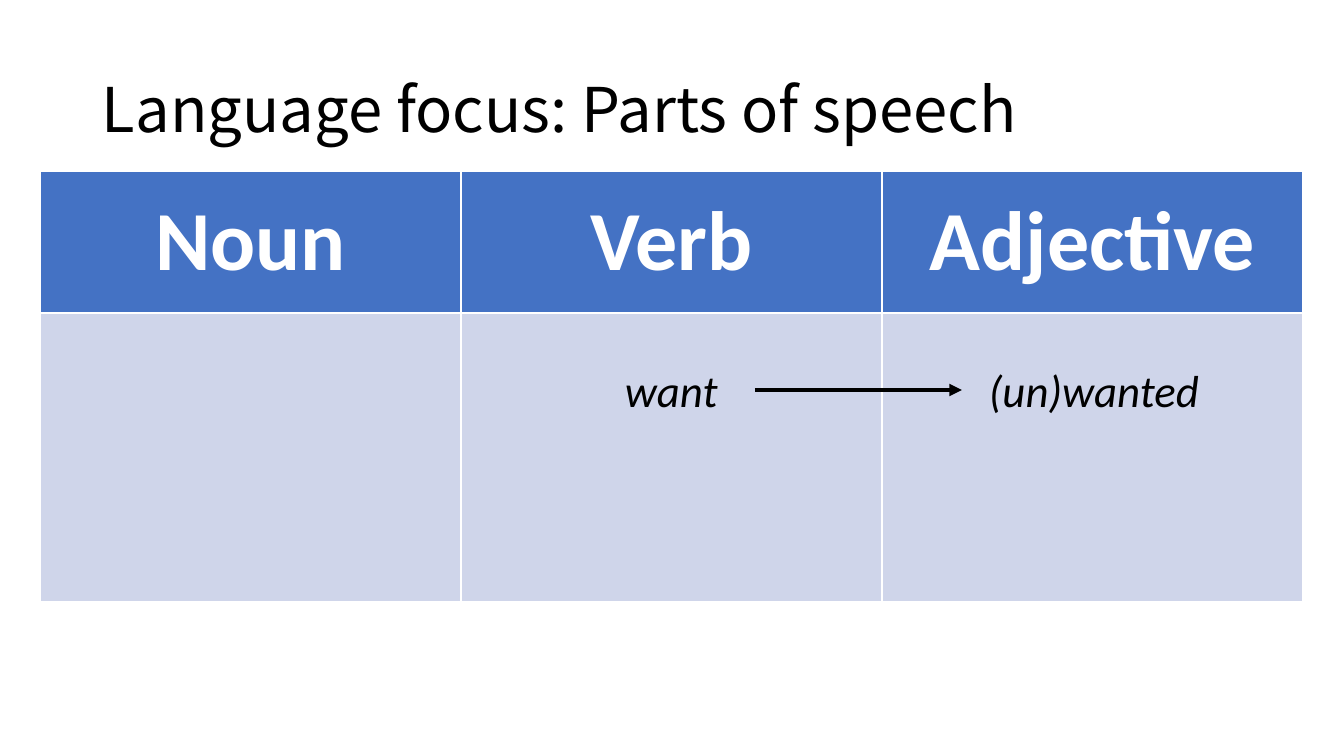
from lxml.etree import SubElement
from pptx import Presentation
from pptx.dml.color import RGBColor
from pptx.enum.shapes import MSO_CONNECTOR as Connector
from pptx.enum.text import MSO_ANCHOR as Anchor, PP_ALIGN as Align
from pptx.oxml.ns import qn
from pptx.util import Emu, Pt

TITLE = "Language focus: Parts of speech"
TITLE_BOX = (92, 40, 1159, 146)
HEADINGS = ["Noun", "Verb", "Adjective"]
WORDS = [("want", (615, 358, 114, 65)), ("(un)wanted", (979, 358, 233, 65))]
ARROW = (755, 390, 962, 390)

TABLE_LEFT, TABLE_TOP = 40, 171
COLUMN_WIDTH = 421
ROW_HEIGHTS = [142, 289]

TITLE_FONT, BODY_FONT = "Noto Sans CJK SC", "Calibri"
BLACK = RGBColor(0x00, 0x00, 0x00)
WHITE = RGBColor(0xFF, 0xFF, 0xFF)
HEADER_BLUE = RGBColor(0x44, 0x72, 0xC4)
BODY_BLUE = RGBColor(0xCF, 0xD5, 0xEA)


def px(*lengths):
    """Turn px lengths into EMU at 100.8 px to the inch."""
    return [Emu(round(length * 914400 / 100.8)) for length in lengths]


def style(para, name, size, color, bold=False, italic=False):
    font = para.runs[0].font
    font.name, font.size = name, Pt(size)
    font.bold, font.italic = bold, italic
    font.color.rgb = color


def add_text(page, text, place, name, size, italic=False, wrap=False):
    box = page.shapes.add_textbox(*px(*place))
    frame = box.text_frame
    frame.text = text
    frame.word_wrap = wrap
    style(frame.paragraphs[0], name, size, BLACK, italic=italic)
    return frame


def add_word_table(page):
    columns = len(HEADINGS)
    place = px(TABLE_LEFT, TABLE_TOP, COLUMN_WIDTH * columns, sum(ROW_HEIGHTS))
    table = page.shapes.add_table(len(ROW_HEIGHTS), columns, *place).table
    for column in table.columns:
        column.width = px(COLUMN_WIDTH)[0]
    for row, height in zip(table.rows, px(*ROW_HEIGHTS)):
        row.height = height
    for cell in table.iter_cells():
        cell.fill.solid()
        cell.fill.fore_color.rgb = BODY_BLUE
    for cell, heading in zip(table.rows[0].cells, HEADINGS):
        cell.fill.fore_color.rgb = HEADER_BLUE
        cell.vertical_anchor = Anchor.MIDDLE
        cell.text = heading
        para = cell.text_frame.paragraphs[0]
        para.alignment = Align.CENTER
        style(para, BODY_FONT, 60, WHITE, bold=True)


def add_arrow(page):
    arrow = page.shapes.add_connector(Connector.STRAIGHT, *px(*ARROW))
    arrow.line.color.rgb = BLACK
    arrow.line.width = Pt(3)
    SubElement(arrow.line._get_or_add_ln(), qn("a:tailEnd"), type="triangle")
    SubElement(arrow._element.spPr, qn("a:effectLst"))


def main():
    deck = Presentation()
    deck.slide_width, deck.slide_height = px(1344, 756)
    page = deck.slides.add_slide(deck.slide_layouts[6])

    title = add_text(page, TITLE, TITLE_BOX, TITLE_FONT, 44, wrap=True)
    title.vertical_anchor = Anchor.MIDDLE
    title.paragraphs[0].line_spacing = 0.9

    add_word_table(page)
    for word, place in WORDS:
        add_text(page, word, place, BODY_FONT, 32, italic=True)
    add_arrow(page)
    deck.save("out.pptx")


if __name__ == "__main__":
    main()
